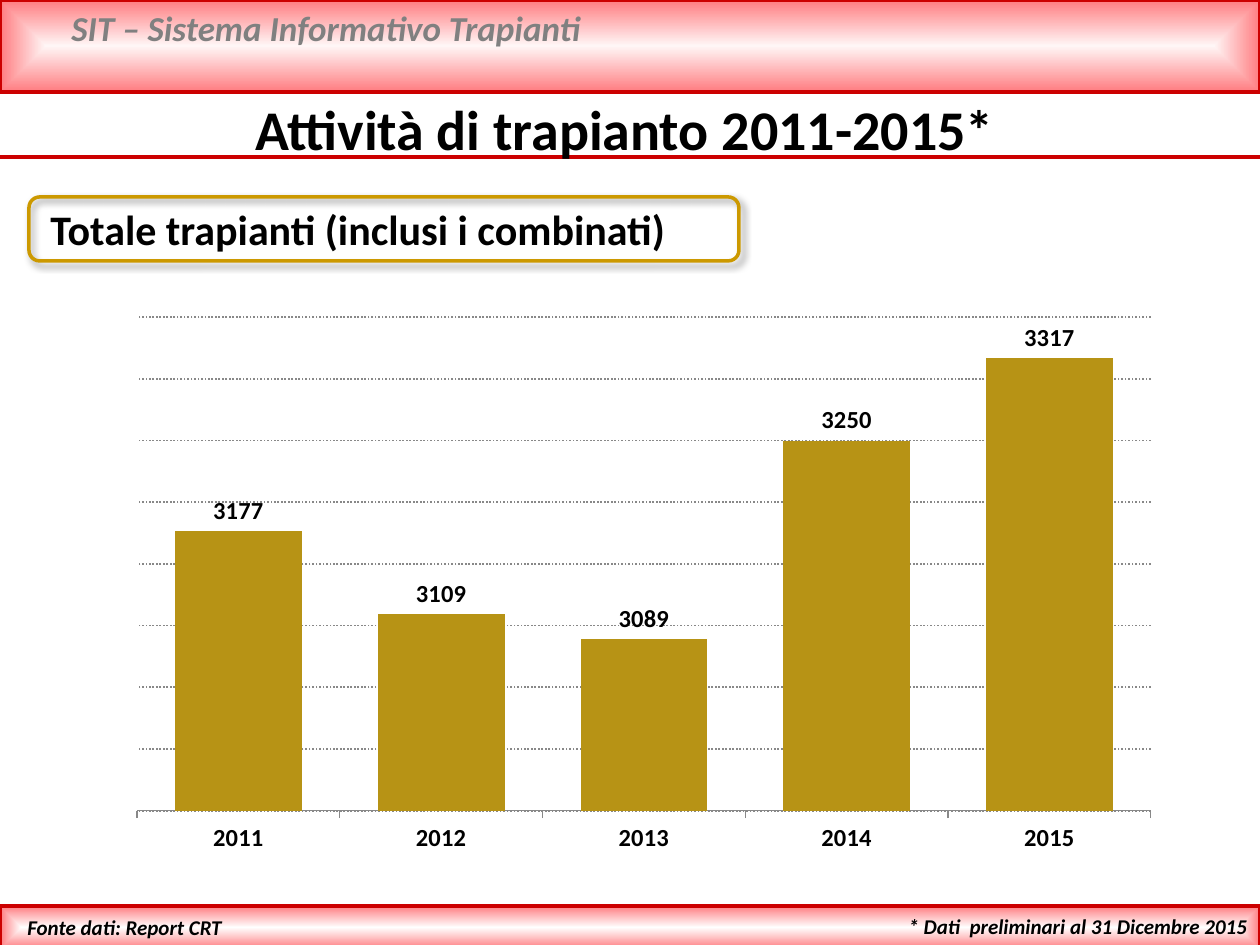
"""Build the slide on transplant activity 2011-2015."""
from lxml.etree import SubElement
from pptx import Presentation
from pptx.chart.data import CategoryChartData
from pptx.dml.color import RGBColor
from pptx.enum.chart import XL_CHART_TYPE, XL_LABEL_POSITION, XL_TICK_LABEL_POSITION, XL_TICK_MARK
from pptx.enum.dml import MSO_LINE
from pptx.enum.shapes import MSO_CONNECTOR, MSO_SHAPE
from pptx.enum.text import MSO_ANCHOR, PP_ALIGN
from pptx.oxml.ns import qn
from pptx.util import Pt

PX = 914400 // 126
THEME = {
    "face": "Calibri",
    "ink": RGBColor(0, 0, 0),
    "grey": RGBColor(0x80, 0x80, 0x80),
    "grid": RGBColor(0x88, 0x88, 0x88),
    "red": RGBColor(0xCC, 0, 0),
    "rose": RGBColor(0xFF, 0x7C, 0x80),
    "pale": RGBColor(0xFF, 0xF6, 0xF6),
    "white": RGBColor(0xFF, 0xFF, 0xFF),
    "gold": RGBColor(0xCC, 0x99, 0),
    "bar": RGBColor(0xB7, 0x93, 0x15),
    "head": Pt(20), "title": Pt(32), "sub": Pt(24),
    "foot": Pt(12), "label": Pt(14), "line": Pt(2),
}


def style(item, **vals):
    for name, val in vals.items():
        setattr(item, name, val)


def write(box, text, size, tint="ink", align=PP_ALIGN.LEFT, italic=False):
    frame = box.text_frame
    style(frame, text=text, word_wrap=True, vertical_anchor=MSO_ANCHOR.TOP)
    para = frame.paragraphs[0]
    para.alignment = align
    style(para.font, name=THEME["face"], size=THEME[size], bold=True, italic=italic)
    para.font.color.rgb = THEME[tint]


deck = Presentation()
style(deck, slide_width=1260 * PX, slide_height=945 * PX)
slide = deck.slides.add_slide(deck.slide_layouts[5])
shapes = slide.shapes

for top, high, core in ((0, 92, "pale"), (906, 43, "white")):
    band = shapes.add_shape(MSO_SHAPE.RECTANGLE, 0, top * PX, 1260 * PX, high * PX)
    band.shadow.inherit = False
    style(band.line, width=THEME["line"])
    band.line.color.rgb = THEME["red"]
    band.fill.gradient()
    for stop, tint, place in zip(band.fill.gradient_stops, (core, "rose"), (0, 1)):
        stop.position = place
        stop.color.rgb = THEME[tint]
    grad = band._element.spPr.find(qn("a:gradFill"))
    grad.remove(grad.find(qn("a:lin")))
    route = SubElement(grad, qn("a:path"), {"path": "shape"})
    SubElement(route, qn("a:fillToRect"), {side: "50000" for side in "ltrb"})

rule = shapes.add_connector(MSO_CONNECTOR.STRAIGHT, 0, 157 * PX, 1260 * PX, 157 * PX)
rule.line.width = THEME["line"]
rule.line.color.rgb = THEME["red"]
SubElement(rule._element.spPr, qn("a:effectLst"))

title = shapes.title
style(title, left=0, top=88 * PX, width=1250 * PX, height=81 * PX)
write(title, "Attività di trapianto 2011-2015*", "title", align=PP_ALIGN.CENTER)
shapes._spTree.append(title._element)

texts = (
    ((59, 0, 1131, 55), "SIT – Sistema Informativo Trapianti", "head", "grey", PP_ALIGN.LEFT, True),
    ((740, 907, 520, 38), "* Dati  preliminari al 31 Dicembre 2015", "foot", "ink", PP_ALIGN.RIGHT, True),
    ((15, 908, 404, 37), "Fonte dati: Report CRT", "foot", "ink", PP_ALIGN.LEFT, True),
    ((38, 197, 701, 64), "Totale trapianti (inclusi i combinati)", "sub", "ink", PP_ALIGN.LEFT, False),
)
for area, *look in texts:
    write(shapes.add_textbox(*(n * PX for n in area)), *look)

frame = shapes.add_shape(MSO_SHAPE.ROUNDED_RECTANGLE, 29 * PX, 197 * PX, 710 * PX, 64 * PX)
frame.fill.background()
frame.line.width = THEME["line"]
frame.line.color.rgb = THEME["gold"]
frame.shadow.inherit = False
cast = SubElement(frame._element.spPr.find(qn("a:effectLst")), qn("a:outerShdw"),
                  {"blurRad": str(Pt(4)), "dist": str(Pt(3)), "dir": "2700000",
                   "algn": "tl", "rotWithShape": "0"})
shade = SubElement(cast, qn("a:srgbClr"), {"val": str(THEME["ink"])})
SubElement(shade, qn("a:alpha"), {"val": "40000"})

data = CategoryChartData()
data.categories = ["2011", "2012", "2013", "2014", "2015"]
data.add_series("Series 1", (3177, 3109, 3089, 3250, 3317))
chart = shapes.add_chart(XL_CHART_TYPE.COLUMN_CLUSTERED, 116 * PX, 306 * PX,
                         1056 * PX, 561 * PX, data).chart
style(chart, has_legend=False, has_title=False)
style(chart.font, name=THEME["face"], size=THEME["label"], bold=True)
chart.font.color.rgb = THEME["ink"]

plot = chart.plots[0]
style(plot, gap_width=60, overlap=-20, vary_by_categories=False, has_data_labels=True)
style(plot.data_labels, show_value=True, position=XL_LABEL_POSITION.OUTSIDE_END)
bars = plot.series[0].format.fill
bars.solid()
bars.fore_color.rgb = THEME["bar"]

years = chart.category_axis
style(years, major_tick_mark=XL_TICK_MARK.OUTSIDE, has_major_gridlines=False,
      tick_label_position=XL_TICK_LABEL_POSITION.LOW)
scale = chart.value_axis
style(scale, minimum_scale=2950, maximum_scale=3350, major_unit=50,
      has_major_gridlines=True, visible=False)
grid = scale.major_gridlines.format.line
style(grid, width=Pt(1), dash_style=MSO_LINE.ROUND_DOT)
for line in (grid, years.format.line):
    line.color.rgb = THEME["grid"]

area = chart._chartSpace.find(".//" + qn("c:plotArea"))
for old in area.findall(qn("c:layout")):
    area.remove(old)
layout = SubElement(area, qn("c:layout"))
area.insert(0, layout)
manual = SubElement(layout, qn("c:manualLayout"))
for tag, val in (("layoutTarget", "inner"), ("xMode", "edge"), ("yMode", "edge"),
                 ("x", "0.02"), ("y", "0.02"), ("w", "0.96"), ("h", "0.88")):
    SubElement(manual, qn("c:" + tag), {"val": val})

deck.save("out.pptx")
